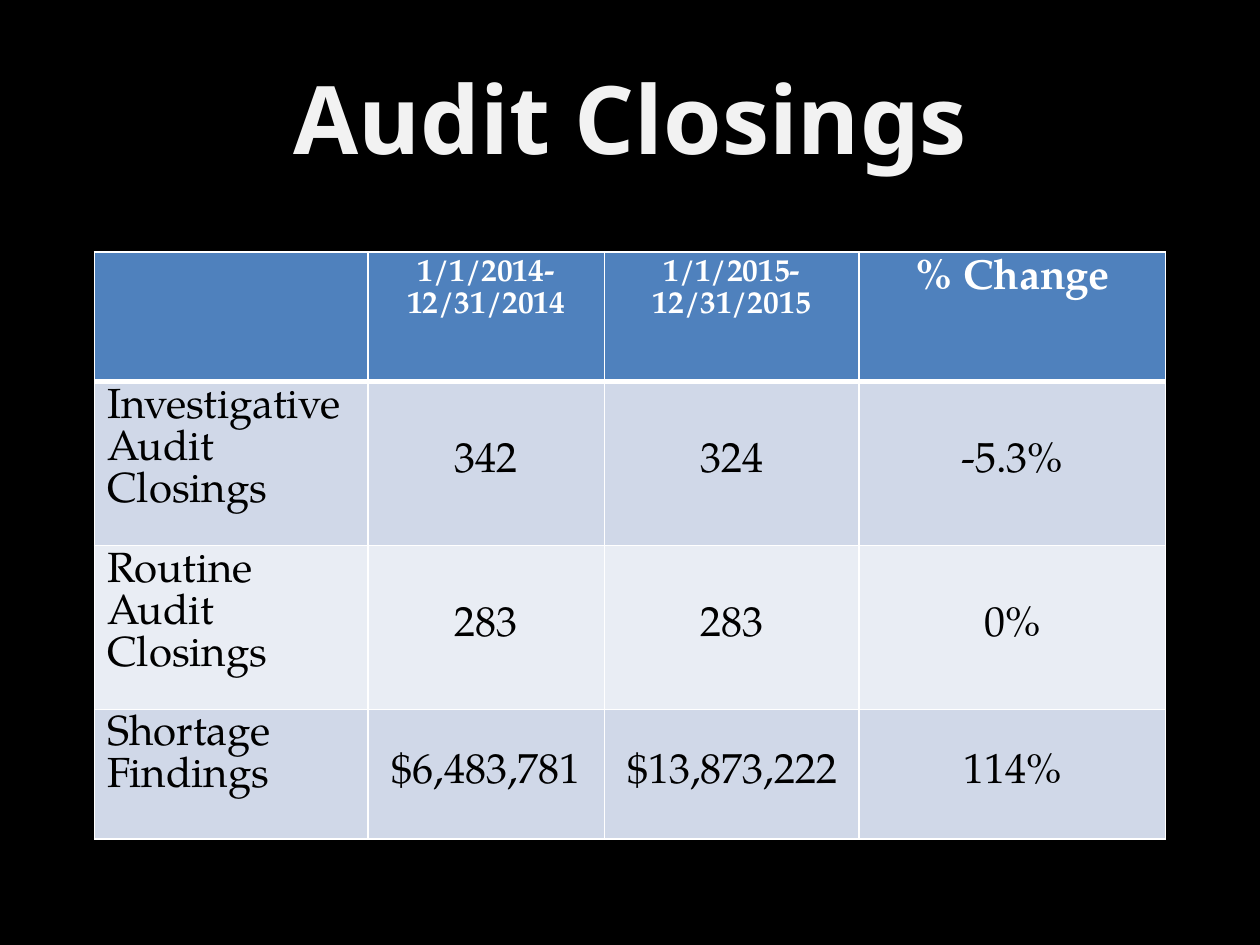
from lxml.etree import SubElement
from pptx import Presentation
from pptx.dml.color import RGBColor
from pptx.enum.text import MSO_ANCHOR as Anchor, PP_ALIGN as Align
from pptx.oxml.ns import qn
from pptx.util import Inches, Pt

BLACK = RGBColor(0, 0, 0)
WHITE = RGBColor(0xFF, 0xFF, 0xFF)
OFF_WHITE = RGBColor(0xF2, 0xF2, 0xF2)
HEADER_BLUE = RGBColor(0x4F, 0x81, 0xBD)
BANDS = [RGBColor(0xD0, 0xD8, 0xE8), RGBColor(0xE9, 0xED, 0xF4)]

TITLE_FONT = "Noto Sans"
TABLE_FONT = "TeX Gyre Pagella"

COL_WIDTHS = [2.17, 1.88, 2.02, 2.43]
ROW_HEIGHTS = [1.03, 1.3, 1.3, 1.03]
ROWS = [
    ["", "1/1/2014-12/31/2014", "1/1/2015-12/31/2015", "% Change"],
    ["Investigative Audit Closings", "342", "324", "-5.3%"],
    ["Routine Audit Closings", "283", "283", "0%"],
    ["Shortage Findings", "$6,483,781", "$13,873,222", "114%"],
]


def write_text(tf, text, font=TABLE_FONT, size=24, color=BLACK, bold=False,
               align=Align.CENTER, spacing=None):
    p = tf.paragraphs[0]
    p.alignment = align
    p.line_spacing = spacing
    r = p.add_run()
    r.text = text
    r.font.name = font
    r.font.size = Pt(size)
    r.font.bold = bold
    r.font.color.rgb = color


def set_borders(cell, top=1, bottom=1):
    """Draw white cell borders; widths are in points."""
    tc_pr = cell._tc.get_or_add_tcPr()
    for side, width in zip("LRTB", (1, 1, top, bottom)):
        ln = SubElement(tc_pr, qn(f"a:ln{side}"), w=str(Pt(width)))
        fill = SubElement(ln, qn("a:solidFill"))
        SubElement(fill, qn("a:srgbClr"), val=str(WHITE))


def fill_cell(cell, text, row, col):
    header = row == 0
    set_borders(cell, top=3 if row == 1 else 1, bottom=3 if header else 1)
    cell.fill.solid()
    cell.fill.fore_color.rgb = HEADER_BLUE if header else BANDS[(row - 1) % 2]
    is_value = not header and col > 0
    cell.vertical_anchor = Anchor.MIDDLE if is_value else Anchor.TOP
    if text:
        size = 18 if header and col < 3 else 24
        write_text(cell.text_frame, text, size=size, bold=header,
                   color=WHITE if header else BLACK, spacing=Pt(size),
                   align=Align.CENTER if header or is_value else Align.LEFT)


def add_closings_table(slide):
    table = slide.shapes.add_table(
        len(ROWS), len(COL_WIDTHS), Inches(0.75), Inches(2),
        Inches(sum(COL_WIDTHS)), Inches(sum(ROW_HEIGHTS))).table
    for column, width in zip(table.columns, COL_WIDTHS):
        column.width = Inches(width)
    for row, height in zip(table.rows, ROW_HEIGHTS):
        row.height = Inches(height)
    for i, texts in enumerate(ROWS):
        for j, text in enumerate(texts):
            fill_cell(table.cell(i, j), text, i, j)


def set_title(slide, text):
    title = slide.shapes.title
    title.left, title.top = Inches(0.5), Inches(0.3)
    title.width, title.height = Inches(9), Inches(1.25)
    title.text_frame.vertical_anchor = Anchor.MIDDLE
    write_text(title.text_frame, text, font=TITLE_FONT, size=54,
               color=OFF_WHITE, bold=True)


def main():
    prs = Presentation()
    prs.slide_width, prs.slide_height = Inches(10), Inches(7.5)
    slide = prs.slides.add_slide(prs.slide_layouts[5])
    slide.background.fill.solid()
    slide.background.fill.fore_color.rgb = BLACK
    add_closings_table(slide)
    set_title(slide, "Audit Closings")
    prs.save("out.pptx")


if __name__ == "__main__":
    main()
